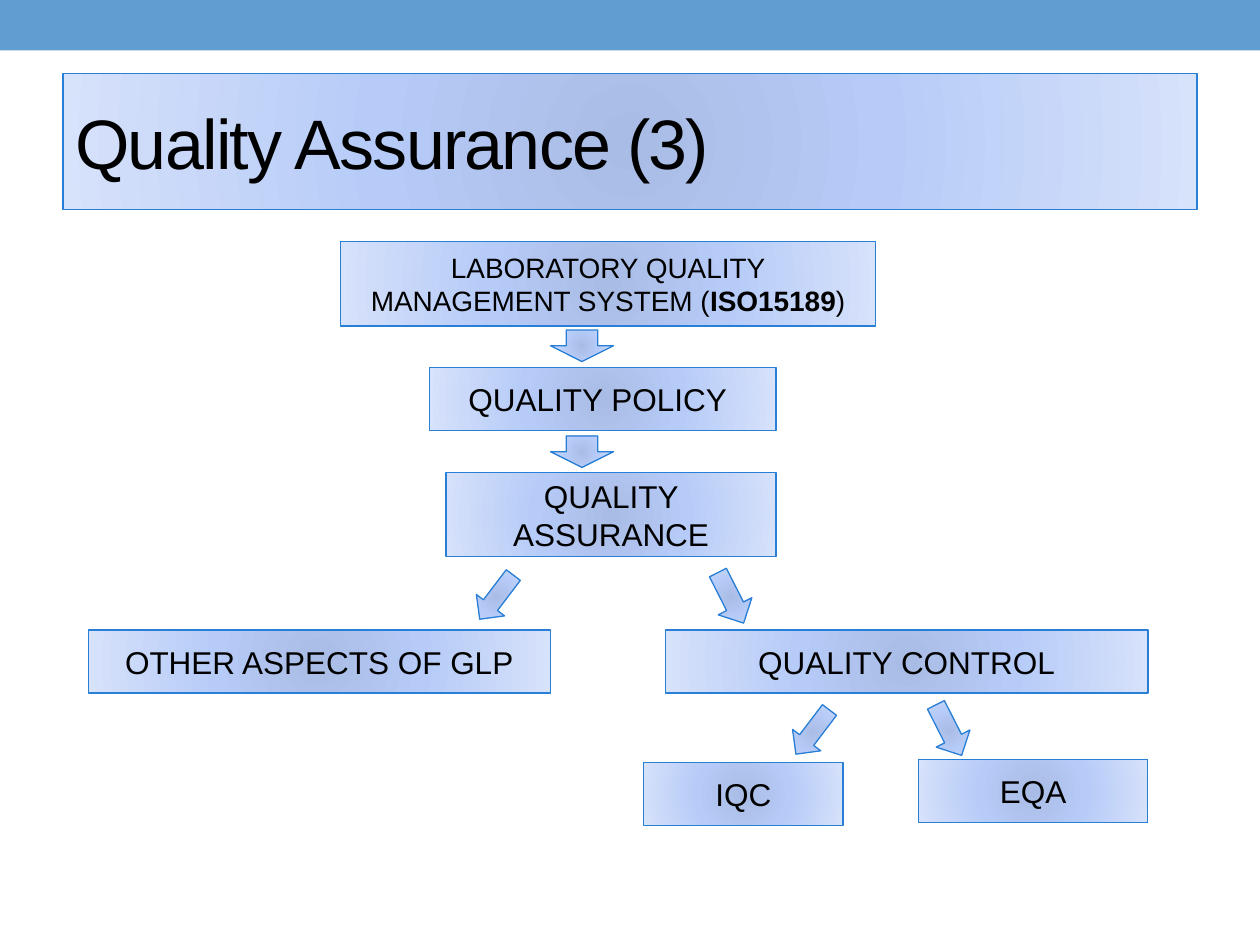
import pptx
import pptx.dml.color
import pptx.enum.shapes
import pptx.enum.text
import pptx.oxml
import pptx.oxml.ns
import pptx.util

Pt = pptx.util.Pt
SHAPE = pptx.enum.shapes.MSO_SHAPE
ALIGN = pptx.enum.text.PP_ALIGN
COLORS = {
    "band": "629DD1",
    "line": "297FD5",
    "text": "000000",
    "core": "A9BCE5",
    "mid": "B6CBF7",
    "rim": "D7E2FB",
}
STOPS = [(0, "core"), (45, "mid"), (100, "rim")]

# Left, top, width, height, then the runs as (text, bold)
BOXES = [
    ((194.4, 138.2, 306, 48.2),
     [("LABORATORY QUALITY MANAGEMENT SYSTEM (", False),
      ("ISO15189", True), (")", False)], {"size": 16}),
    ((245.5, 210.2, 198, 36), [("QUALITY POLICY", False)],
     {"align": ALIGN.LEFT, "inset": 22.2}),
    ((380.2, 360, 275.8, 36), [("QUALITY CONTROL", False)], {}),
    ((254.9, 270, 188.6, 48.2), [("QUALITY ASSURANCE", False)], {}),
    ((50.4, 360, 264.2, 36), [("OTHER ASPECTS OF GLP", False)], {}),
    ((367.9, 435.6, 113.8, 36), [("IQC", False)], {}),
    ((524.9, 434.2, 131, 36), [("EQA", False)], {}),
]
DOWN = (36, 18, 0)
LEFT = (20.2, 31.7, 37.2)
RIGHT = (21.6, 32.4, 333.1)
ARROWS = [
    (314.6, 188.6, DOWN),
    (314.6, 249.1, DOWN),
    (273.6, 325.4, LEFT),
    (406.8, 325.4, RIGHT),
    (454.3, 402.5, LEFT),
    (531.4, 401, RIGHT),
]


def color(name):
    return pptx.dml.color.RGBColor.from_string(COLORS[name])


def glow(shape):
    """Fill a shape with a radial gradient, darkest in the centre."""
    stops = "".join(
        f'<a:gs pos="{pos * 1000}"><a:srgbClr val="{COLORS[name]}"/></a:gs>'
        for pos, name in STOPS)
    grad = pptx.oxml.parse_xml(
        f'<a:gradFill {pptx.oxml.ns.nsdecls("a")} rotWithShape="1">'
        f'<a:gsLst>{stops}</a:gsLst><a:path path="circle">'
        '<a:fillToRect l="100000" t="100000" r="100000" b="100000"/>'
        '</a:path></a:gradFill>')
    shape.fill.solid()
    props = shape.element.spPr
    props.replace(props.find(pptx.oxml.ns.qn("a:solidFill")), grad)


def add_form(slide, kind, rect):
    """Add a preset shape with the gradient and outline."""
    shape = slide.shapes.add_shape(kind, *map(Pt, rect))
    shape.shadow.inherit = False
    glow(shape)
    shape.line.color.rgb = color("line")
    shape.line.width = Pt(0.75)
    return shape


def set_text(shape, runs, size=18, align=ALIGN.CENTER, inset=7.2, space=0):
    frame = shape.text_frame
    frame.word_wrap = True
    frame.vertical_anchor = pptx.enum.text.MSO_ANCHOR.MIDDLE
    frame.margin_left = Pt(inset)
    para = frame.paragraphs[0]
    para.alignment = align
    for text, bold in runs:
        run = para.add_run()
        run.text = text
        font = run.font
        font.name = "Arial"
        font.size = Pt(size)
        font.bold = bold
        font.color.rgb = color("text")
        if space:
            run._r.get_or_add_rPr().set("spc", str(space * 100))


def add_box(slide, rect, runs, **style):
    set_text(add_form(slide, SHAPE.RECTANGLE, rect), runs, **style)


def add_arrow(slide, left, top, form):
    width, height, turn = form
    shape = add_form(slide, SHAPE.DOWN_ARROW, (left, top, width, height))
    shape.rotation = turn


def add_band(slide, width):
    band = slide.shapes.add_shape(SHAPE.RECTANGLE, 0, 0, width, Pt(28.8))
    band.shadow.inherit = False
    band.fill.solid()
    band.fill.fore_color.rgb = color("band")
    band.line.fill.background()


def main():
    deck = pptx.Presentation()
    deck.slide_width, deck.slide_height = Pt(720), Pt(540)
    slide = deck.slides.add_slide(deck.slide_layouts[6])
    add_band(slide, deck.slide_width)
    add_box(slide, (36, 41.8, 648, 77.8), [("Quality Assurance (3)", False)],
            size=40, align=ALIGN.LEFT, space=-1)
    for rect, runs, style in BOXES:
        add_box(slide, rect, runs, **style)
    for left, top, form in ARROWS:
        add_arrow(slide, left, top, form)
    deck.save("out.pptx")


if __name__ == "__main__":
    main()
